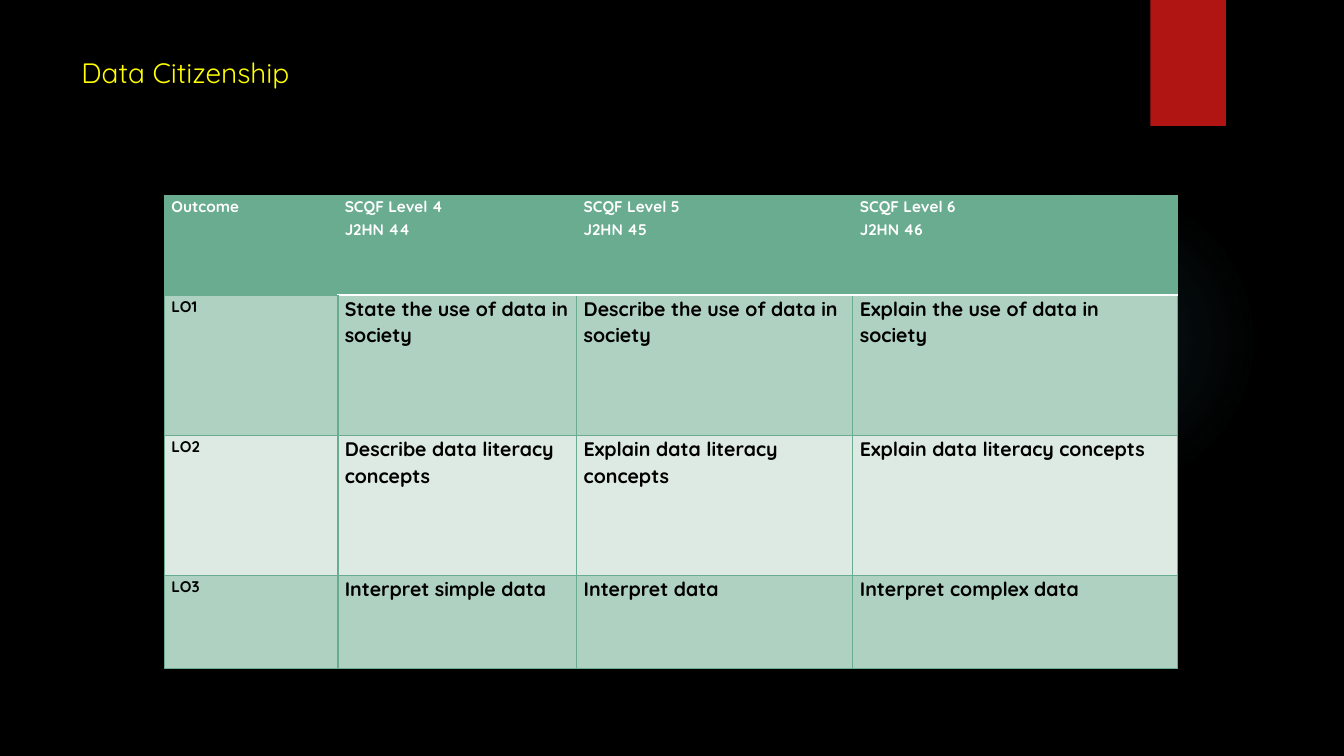
import pptx
import pptx.dml.color
import pptx.enum.shapes
import pptx.oxml
import pptx.oxml.ns
import pptx.util
from pptx.util import Inches

FONT = "Quicksand"
GREEN = "6AAC90"
WHITE = "FFFFFF"
BAND_FILLS = ["AFD1C2", "DDEAE3"]
COLUMN_WIDTHS = [1.72, 2.37, 2.74, 3.22]
ROW_HEIGHTS = [0.99, 1.39, 1.39, 0.92]
OUTCOMES = [
    ["Outcome", "SCQF Level 4\nJ2HN 44", "SCQF Level 5\nJ2HN 45", "SCQF Level 6\nJ2HN 46"],
    ["LO1", "State the use of data in society", "Describe the use of data in society",
     "Explain the use of data in society"],
    ["LO2", "Describe data literacy concepts", "Explain data literacy concepts",
     "Explain data literacy concepts"],
    ["LO3", "Interpret simple data", "Interpret data", "Interpret complex data"],
]


def color(value):
    return pptx.dml.color.RGBColor.from_string(value)


def paint(target, value):
    target.fill.solid()
    target.fill.fore_color.rgb = color(value)


def style(paragraph, size, value, bold=False):
    paragraph.font.name = FONT
    paragraph.font.size = pptx.util.Pt(size)
    paragraph.font.bold = bold
    paragraph.font.color.rgb = color(value)


def add_plain_shape(slide, kind, left, top, width, height):
    shape = slide.shapes.add_shape(kind, Inches(left), Inches(top), Inches(width), Inches(height))
    shape.shadow.inherit = False
    shape.line.fill.background()
    return shape


def add_glow(slide, left, top, size):
    oval = add_plain_shape(slide, pptx.enum.shapes.MSO_SHAPE.OVAL, left, top, size, size)
    stops = "".join(
        f'<a:gs pos="{position}000"><a:srgbClr val="50B9C1"><a:alpha val="{alpha}000"/></a:srgbClr></a:gs>'
        for position, alpha in [(0, 7), (36, 6), (69, 0)])
    gradient = pptx.oxml.parse_xml(
        f'<a:gradFill {pptx.oxml.ns.nsdecls("a")}><a:gsLst>{stops}</a:gsLst><a:path path="circle">'
        '<a:fillToRect l="50000" t="50000" r="50000" b="50000"/></a:path></a:gradFill>')
    oval.element.spPr.find(pptx.oxml.ns.qn("a:prstGeom")).addnext(gradient)


def add_ribbon(slide, left, top, width, height):
    ribbon = add_plain_shape(slide, pptx.enum.shapes.MSO_SHAPE.RECTANGLE, left, top, width, height)
    paint(ribbon, "B01513")


def add_title(slide, left, top, width, height):
    box = slide.shapes.add_textbox(Inches(left), Inches(top), Inches(width), Inches(height))
    box.text_frame.word_wrap = True
    box.text_frame.text = "Data Citizenship"
    style(box.text_frame.paragraphs[0], 20, "FFFF00")


def set_borders(cell, borders):
    properties = cell._tc.get_or_add_tcPr()
    for index, (side, (value, width)) in enumerate(borders.items()):
        line = pptx.oxml.parse_xml(
            f'<a:ln{side} {pptx.oxml.ns.nsdecls("a")} w="{pptx.util.Pt(width)}">'
            f'<a:solidFill><a:srgbClr val="{value}"/></a:solidFill></a:ln{side}>')
        properties.insert(index, line)


def fill_cell(cell, text, row, column):
    header = row == 0
    paint(cell, GREEN if header else BAND_FILLS[(row - 1) % 2])
    cell.margin_left = cell.margin_right = Inches(0.07)
    cell.margin_top = cell.margin_bottom = 0
    cell.text = text
    for paragraph in cell.text_frame.paragraphs:
        paragraph.line_spacing = 1.07
        paragraph.space_after = pptx.util.Pt(1.9)
        style(paragraph, 11 if header or column == 0 else 14, WHITE if header else "000000", True)

    borders = {side: (GREEN, 0.75) for side in "LRTB"}
    if column == 0 and not header:
        borders["R"] = (GREEN, 1.5)
    if column == 1 and not header:
        borders["L"] = (GREEN, 1.5)
    if column > 0 and row < 2:
        borders["B" if header else "T"] = (WHITE, 1.5) if header else (WHITE, 0.75)
    set_borders(cell, borders)


def add_outcome_table(slide, left, top):
    frame = slide.shapes.add_table(
        len(ROW_HEIGHTS), len(COLUMN_WIDTHS), Inches(left), Inches(top),
        Inches(sum(COLUMN_WIDTHS)), Inches(sum(ROW_HEIGHTS)))
    table = frame.table
    for column, width in zip(table.columns, COLUMN_WIDTHS):
        column.width = Inches(width)
    for row, height in zip(table.rows, ROW_HEIGHTS):
        row.height = Inches(height)
    for row, texts in enumerate(OUTCOMES):
        for column, text in enumerate(texts):
            fill_cell(table.cell(row, column), text, row, column)


def main():
    deck = pptx.Presentation()
    deck.slide_width, deck.slide_height = Inches(13.33), Inches(7.5)
    slide = deck.slides.add_slide(deck.slide_layouts[6])
    paint(slide.background, "000000")
    add_glow(slide, 9.41, 1.83, 3.08)
    add_ribbon(slide, 11.41, 0, 0.75, 1.25)
    add_title(slide, 0.71, 0.5, 10.29, 0.67)
    add_outcome_table(slide, 1.63, 1.94)
    deck.save("out.pptx")


if __name__ == "__main__":
    main()
